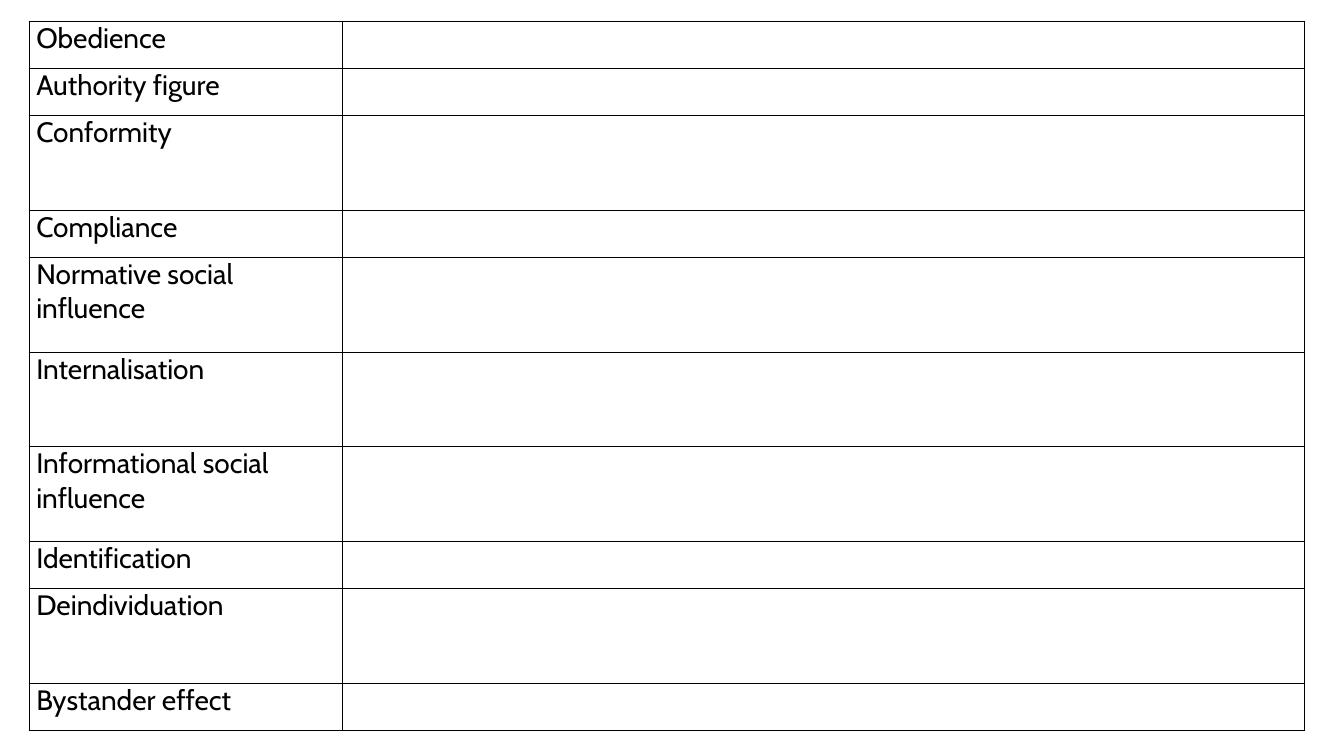
"""Build a glossary slide on social influence with blank space for definitions."""
from dataclasses import dataclass

from lxml import etree
from pptx import Presentation
from pptx.dml.color import RGBColor
from pptx.enum.text import MSO_ANCHOR
from pptx.oxml.ns import qn
from pptx.util import Inches, Pt

TOP = MSO_ANCHOR.TOP
BLANK = 6
EDGES = ("a:lnL", "a:lnR", "a:lnT", "a:lnB")

TERMS = [
    ("Obedience", 1),
    ("Authority figure", 1),
    ("Conformity", 2),
    ("Compliance", 1),
    ("Normative social influence", 2),
    ("Internalisation", 2),
    ("Informational social influence", 2),
    ("Identification", 1),
    ("Deindividuation", 2),
    ("Bystander effect", 1),
]


@dataclass(frozen=True)
class Theme:
    """Hold the colours, type and line sizes."""

    ink: str = "000000"
    paper: str = "FFFFFF"
    font: str = "Cabin"
    size: float = 20
    line: float = 1
    pad: float = 0.07


class Deck:
    """Hold the theme and the current slide."""

    def __init__(self, theme):
        """Start a wide deck with one blank slide."""
        self.theme = theme
        self.prs = Presentation()
        self.prs.slide_width = Inches(13.33)
        self.prs.slide_height = Inches(7.5)
        self.slide = self.prs.slides.add_slide(self.prs.slide_layouts[BLANK])

    def border(self, cell):
        """Draw a thin line on all four edges of a cell."""
        props = cell._tc.get_or_add_tcPr()
        for spot, edge in enumerate(EDGES):
            line = etree.Element(qn(edge), w=str(Pt(self.theme.line)))
            fill = etree.SubElement(line, qn("a:solidFill"))
            etree.SubElement(fill, qn("a:srgbClr"), val=self.theme.ink)
            props.insert(spot, line)

    def cell(self, cell, text=""):
        """Style a cell and write its text."""
        theme = self.theme
        cell.margin_left = cell.margin_right = Inches(theme.pad)
        cell.margin_top = cell.margin_bottom = 0
        cell.vertical_anchor = TOP
        cell.fill.solid()
        cell.fill.fore_color.rgb = RGBColor.from_string(theme.paper)
        self.border(cell)
        para = cell.text_frame.paragraphs[0]
        para.text = text
        para.font.size = Pt(theme.size)
        for run in para.runs:
            run.font.name = theme.font
            run.font.size = Pt(theme.size)
            run.font.color.rgb = RGBColor.from_string(theme.ink)

    def table(self, terms, left, top, cols, height):
        """Add a term table whose rows share the height by their units."""
        unit = height / sum(units for term, units in terms)
        frame = self.slide.shapes.add_table(
            len(terms), len(cols), Inches(left), Inches(top),
            Inches(sum(cols)), Inches(height))
        table = frame.table
        table.first_row = table.horz_banding = False
        for col, width in zip(table.columns, cols):
            col.width = Inches(width)
        for row, (term, units) in zip(table.rows, terms):
            row.height = Inches(unit * units)
            name, space = row.cells
            self.cell(name, term)
            self.cell(space)


def main():
    """Build and save the slide."""
    deck = Deck(Theme())
    deck.table(TERMS, left=0.29, top=0.21, cols=(3.11, 9.54), height=7.04)
    deck.prs.save("out.pptx")


if __name__ == "__main__":
    main()
